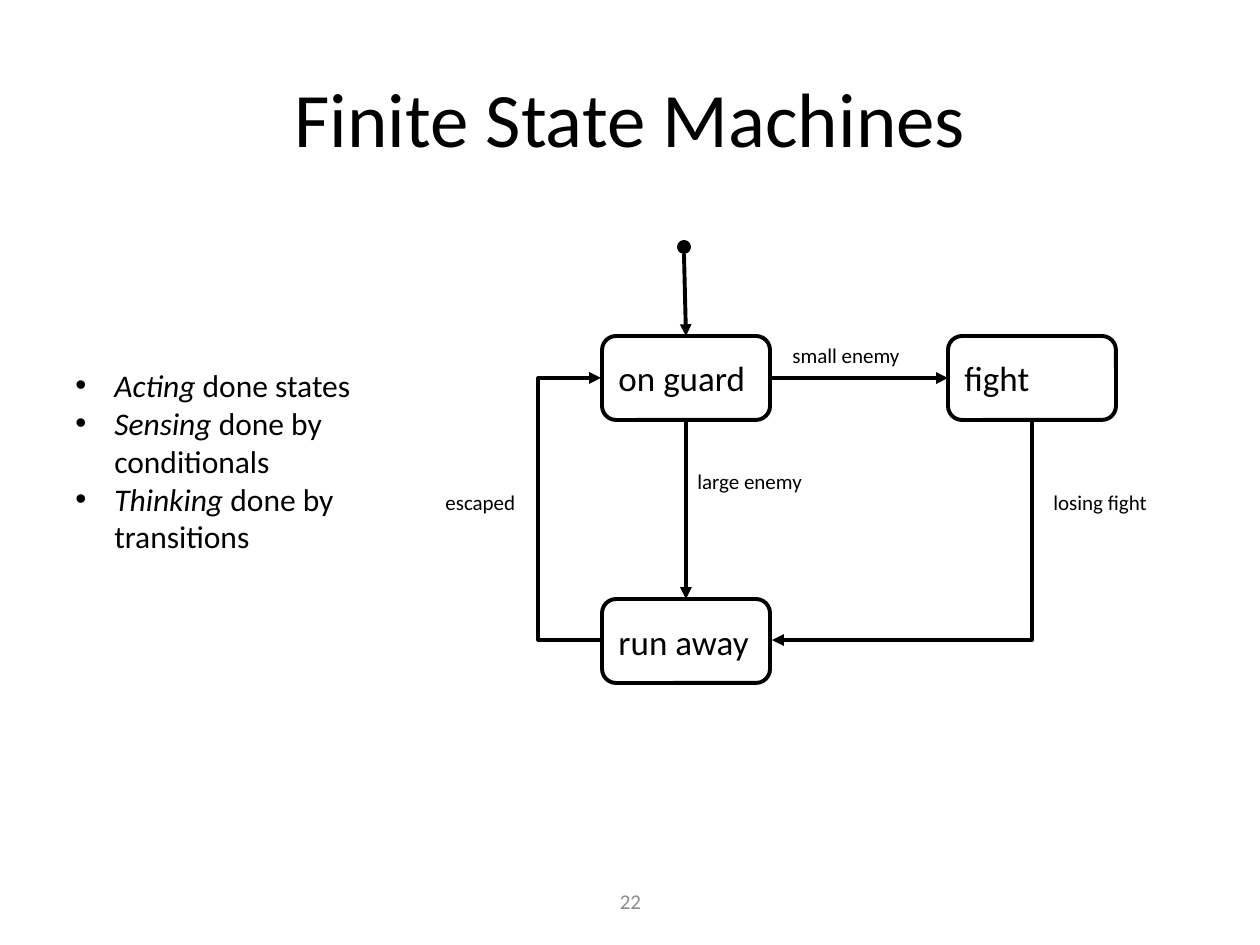
"""Builds the finite state machine slide."""
from dataclasses import dataclass

from lxml.etree import SubElement
from pptx import Presentation
from pptx.dml.color import RGBColor
from pptx.enum.shapes import MSO_CONNECTOR, MSO_SHAPE
from pptx.enum.text import MSO_ANCHOR, PP_ALIGN
from pptx.oxml.ns import qn
from pptx.util import Emu, Pt


@dataclass(frozen=True)
class Theme:
    font: str = "Calibri"
    ink: RGBColor = RGBColor(0, 0, 0)
    muted: RGBColor = RGBColor(0x8C, 0x8C, 0x8C)
    title: int = 44
    state: int = 20
    body: int = 18
    small: int = 12
    stroke: float = 2.25


def px(length):
    return Emu(round(length * 914400 / 126))


class SlideBuilder:
    def __init__(self, slide, theme):
        self.shapes = slide.shapes
        self.theme = theme

    def add_run(self, paragraph, words, size, color=None, italic=False):
        run = paragraph.add_run()
        run.text = words
        run.font.name = self.theme.font
        run.font.size = Pt(size)
        run.font.italic = italic
        run.font.color.rgb = color or self.theme.ink

    def outline(self, item):
        item.line.color.rgb = self.theme.ink
        item.line.width = Pt(self.theme.stroke)

    def frame(self, area, anchor=MSO_ANCHOR.MIDDLE):
        frame = self.shapes.add_textbox(*map(px, area)).text_frame
        frame.word_wrap = True
        frame.vertical_anchor = anchor
        return frame

    def text(self, words, area, size, color=None, align=PP_ALIGN.LEFT):
        paragraph = self.frame(area).paragraphs[0]
        paragraph.alignment = align
        self.add_run(paragraph, words, size, color)

    def bullets(self, items, area, indent):
        frame = self.frame(area, MSO_ANCHOR.TOP)
        for index, (term, rest) in enumerate(items):
            paragraph = frame.add_paragraph() if index else frame.paragraphs[0]
            self.add_run(paragraph, term, self.theme.body, italic=True)
            self.add_run(paragraph, rest, self.theme.body)
            properties = paragraph._p.get_or_add_pPr()
            properties.set("marL", str(px(indent)))
            properties.set("indent", str(-px(indent)))
            SubElement(properties, qn("a:buFont"), typeface="Arial")
            SubElement(properties, qn("a:buChar"), char="•")

    def state(self, name, left, top):
        box = self.shapes.add_shape(
            MSO_SHAPE.ROUNDED_RECTANGLE, *map(px, (left, top, 168, 84)))
        box.shadow.inherit = False
        box.fill.background()
        self.outline(box)
        frame = box.text_frame
        frame.vertical_anchor = MSO_ANCHOR.MIDDLE
        frame.word_wrap = True
        paragraph = frame.paragraphs[0]
        paragraph.alignment = PP_ALIGN.LEFT
        self.add_run(paragraph, name, self.theme.state)
        return box

    def dot(self, left, top, diameter):
        dot = self.shapes.add_shape(
            MSO_SHAPE.OVAL, *map(px, (left, top, diameter, diameter)))
        dot.shadow.inherit = False
        dot.fill.solid()
        dot.fill.fore_color.rgb = self.theme.ink
        self.outline(dot)

    def arrow(self, start, end, kind=MSO_CONNECTOR.STRAIGHT):
        arrow = self.shapes.add_connector(kind, *map(px, (*start, *end)))
        self.outline(arrow)
        SubElement(arrow.line._get_or_add_ln(), qn("a:tailEnd"), type="triangle")
        SubElement(arrow._element.spPr, qn("a:effectLst"))
        return arrow

    def transition(self, source, source_side, target, target_side):
        arrow = self.arrow((0, 0), (0, 0))
        arrow.begin_connect(source, source_side)
        arrow.end_connect(target, target_side)

    def corner_arrow(self, start, end):
        middle_x, middle_y = (start[0] + end[0]) / 2, (start[1] + end[1]) / 2
        half_x, half_y = abs(end[1] - start[1]) / 2, abs(end[0] - start[0]) / 2
        arrow = self.arrow((middle_x - half_x, middle_y - half_y),
                           (middle_x + half_x, middle_y + half_y),
                           MSO_CONNECTOR.ELBOW)
        properties = arrow._element.spPr
        properties.find(qn("a:xfrm")).set("rot", str(90 * 60000))
        properties.find(qn("a:prstGeom")).set("prst", "bentConnector2")

    def loop_arrow(self, start, end, reach):
        arrow = self.arrow(start, end, MSO_CONNECTOR.ELBOW)
        geometry = arrow._element.spPr.find(qn("a:prstGeom"))
        guides = geometry.find(qn("a:avLst"))
        bend = round(-reach * 100000 / (end[0] - start[0]))
        SubElement(guides, qn("a:gd"), name="adj1", fmla=f"val {bend}")


def main():
    theme = Theme()
    deck = Presentation()
    deck.slide_width, deck.slide_height = px(1260), px(945)
    builder = SlideBuilder(deck.slides.add_slide(deck.slide_layouts[6]), theme)

    builder.text("Finite State Machines", (63, 38, 1134, 157), theme.title,
                 align=PP_ALIGN.CENTER)

    on_guard = builder.state("on guard", 602, 336)
    run_away = builder.state("run away", 602, 599)
    fight = builder.state("fight", 948, 336)

    builder.transition(on_guard, 3, fight, 1)
    builder.transition(on_guard, 2, run_away, 0)
    builder.corner_arrow((1032, 422), (772, 640))
    builder.loop_arrow((600, 640), (601, 378), 62)
    builder.dot(679, 242, 10)
    builder.arrow((684, 254), (686, 336)).end_connect(on_guard, 0)

    for condition, left, top, width in (
        ("small enemy", 780, 336, 144),
        ("large enemy", 685, 462, 141),
        ("losing fight", 1041, 483, 126),
        ("escaped", 433, 483, 105),
    ):
        builder.text(condition, (left, top, width, 38), theme.small)

    builder.text("22", (431, 876, 399, 50), theme.small, theme.muted,
                 PP_ALIGN.CENTER)
    builder.bullets((
        ("Acting", " done states"),
        ("Sensing", " done by conditionals"),
        ("Thinking", " done by transitions"),
    ), (63, 360, 352, 204), 39)

    deck.save("out.pptx")


if __name__ == "__main__":
    main()
